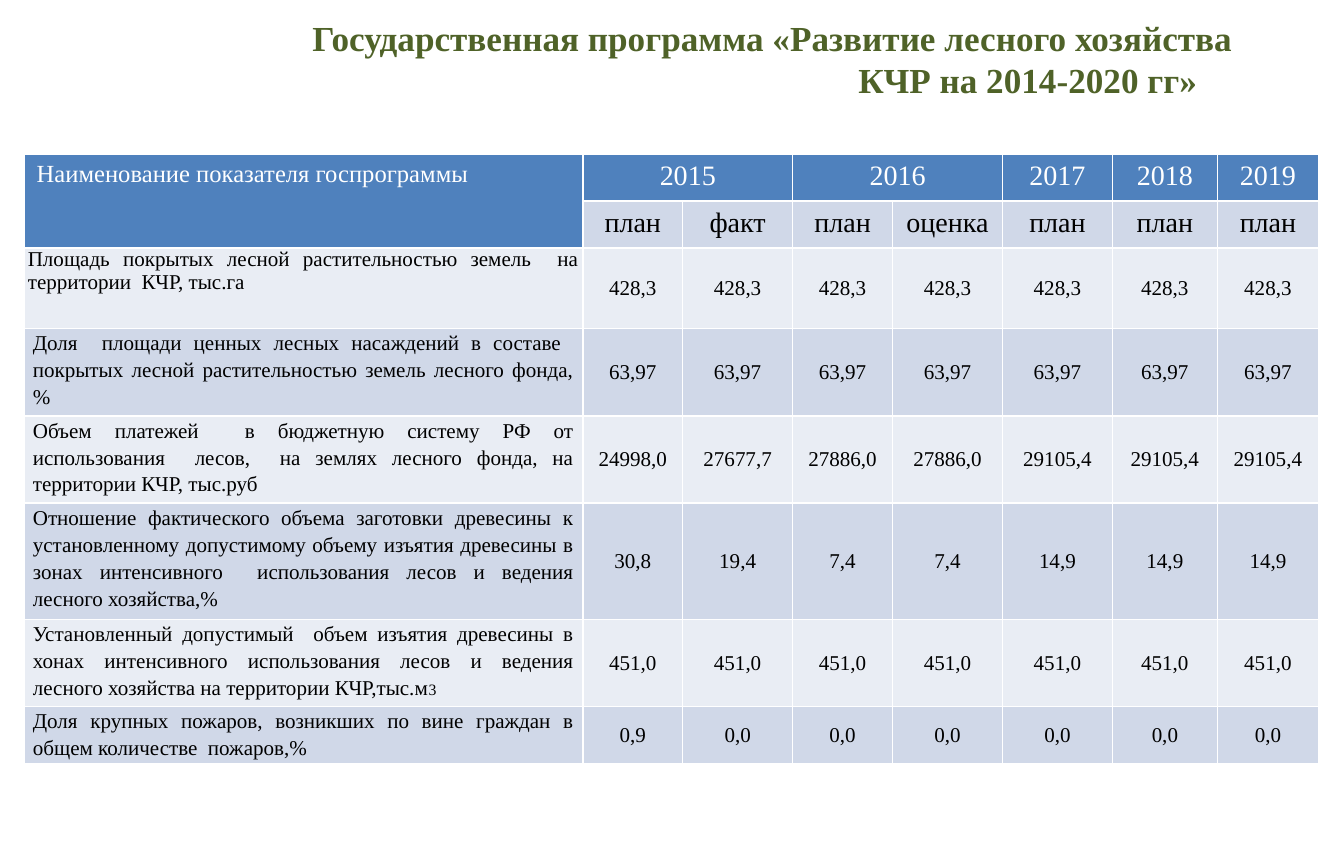
from pptx import Presentation
from pptx import util as u
from pptx.dml.color import RGBColor
from pptx.enum import text

COLORS = {
    "title": "4F6228",
    "header": "4F81BD",
    "header_text": "FFFFFF",
    "body_text": "000000",
    "band_dark": "D0D8E8",
    "band_light": "E9EDF4",
}
FONT = "Times New Roman"
SLIDE_WIDTH, SLIDE_HEIGHT = 10.63, 6.69

COLUMN_WIDTHS = [4.42, 0.79, 0.87, 0.79, 0.87, 0.87, 0.83, 0.8]
ROW_HEIGHTS = [0.37, 0.37, 0.64, 0.69, 0.69, 0.92, 0.69, 0.45]

TITLE = "Государственная программа «Развитие лесного хозяйства КЧР на 2014-2020 гг»"
INDICATOR_HEADING = "Наименование показателя госпрограммы"
YEARS = [("2015", 1, 2), ("2016", 3, 4), ("2017", 5, 5), ("2018", 6, 6), ("2019", 7, 7)]
STAGES = ["план", "факт", "план", "оценка", "план", "план", "план"]
INDICATORS = [
    ("Площадь покрытых лесной растительностью земель  на территории  КЧР, тыс.га",
     ["428,3"] * 7),
    ("Доля  площади ценных лесных насаждений в составе  покрытых лесной "
     "растительностью земель лесного фонда,%",
     ["63,97"] * 7),
    ("Объем платежей  в бюджетную систему РФ от использования  лесов,  "
     "на землях лесного фонда, на территории КЧР, тыс.руб",
     ["24998,0", "27677,7", "27886,0", "27886,0", "29105,4", "29105,4", "29105,4"]),
    ("Отношение фактического объема заготовки древесины к установленному "
     "допустимому объему изъятия древесины в зонах интенсивного  использования "
     "лесов и ведения лесного хозяйства,%",
     ["30,8", "19,4", "7,4", "7,4", "14,9", "14,9", "14,9"]),
    ("Установленный допустимый  объем изъятия древесины в хонах интенсивного "
     "использования лесов и ведения лесного хозяйства на территории КЧР,тыс.м",
     ["451,0"] * 7),
    ("Доля крупных пожаров, возникших по вине граждан в общем количестве  пожаров,%",
     ["0,9"] + ["0,0"] * 6),
]
VOLUME_ROW = 4  # the indicator measured in cubic metres


def add_run(paragraph, content, size=12, color="body_text", bold=False):
    run = paragraph.add_run()
    run.text = content
    run.font.name = FONT
    run.font.size = u.Pt(size)
    run.font.bold = bold
    run.font.color.rgb = RGBColor.from_string(COLORS[color])


def write_text(frame, content, align="CENTER", spacing=None, **run_format):
    paragraph = frame.paragraphs[0]
    paragraph.alignment = getattr(text.PP_ALIGN, align)
    paragraph.line_spacing = spacing
    add_run(paragraph, content, **run_format)
    return paragraph


def fill_cell(cell, content, fill, side_inset=None, middle=False, **text_format):
    """Colour and write a cell; side_inset also removes the vertical margins."""
    cell.fill.solid()
    cell.fill.fore_color.rgb = RGBColor.from_string(COLORS[fill])
    if side_inset is not None:
        cell.margin_left = cell.margin_right = u.Inches(side_inset)
        cell.margin_top = cell.margin_bottom = 0
    if middle:
        cell.vertical_anchor = text.MSO_ANCHOR.MIDDLE
    return write_text(cell.text_frame, content, **text_format)


def place_title(slide):
    """Set the heading with a hanging indent that pushes its second line right."""
    title = slide.shapes.title
    title.left, title.top = u.Inches(2.28), u.Inches(0.08)
    title.width, title.height = u.Inches(7.56), u.Inches(1.35)
    frame = title.text_frame
    frame.word_wrap = True
    frame.auto_size = text.MSO_AUTO_SIZE.NONE
    frame.vertical_anchor = text.MSO_ANCHOR.TOP
    frame.margin_right = 0
    heading = write_text(frame, TITLE, align="LEFT", size=20, color="title", bold=True)
    properties = heading._p.get_or_add_pPr()
    properties.set("marL", str(u.Inches(4.41)))
    properties.set("indent", str(-u.Inches(4.32)))


def add_grid(slide):
    frame = slide.shapes.add_table(
        len(ROW_HEIGHTS), len(COLUMN_WIDTHS), u.Inches(0.19), u.Inches(1.22),
        u.Inches(sum(COLUMN_WIDTHS)), u.Inches(sum(ROW_HEIGHTS)))
    table = frame.table
    for column, width in zip(table.columns, COLUMN_WIDTHS):
        column.width = u.Inches(width)
    for row, height in zip(table.rows, ROW_HEIGHTS):
        row.height = u.Inches(height)
    return table


def fill_header(table):
    corner = table.cell(0, 0)
    corner.merge(table.cell(1, 0))
    fill_cell(corner, INDICATOR_HEADING, "header", align="LEFT", size=14,
              color="header_text")
    for year, first, last in YEARS:
        cell = table.cell(0, first)
        if last > first:
            cell.merge(table.cell(0, last))
        fill_cell(cell, year, "header", size=16, color="header_text")
    for column, stage in enumerate(STAGES, 1):
        fill_cell(table.cell(1, column), stage, "band_dark", size=16)


def fill_indicators(table):
    for index, (indicator, values) in enumerate(INDICATORS):
        row = index + 2
        band = "band_dark" if index % 2 else "band_light"
        label = fill_cell(table.cell(row, 0), indicator, band, align="JUSTIFY",
                          side_inset=0.07 if index else 0.03,
                          spacing=1.15 if index else None)
        if index == VOLUME_ROW:
            add_run(label, "3", size=9)
        for column, value in enumerate(values, 1):
            fill_cell(table.cell(row, column), value, band, side_inset=0.03, middle=True)


def main():
    deck = Presentation()
    deck.slide_width, deck.slide_height = u.Inches(SLIDE_WIDTH), u.Inches(SLIDE_HEIGHT)
    slide = deck.slides.add_slide(deck.slide_layouts.get_by_name("Title Only"))
    place_title(slide)
    table = add_grid(slide)
    fill_header(table)
    fill_indicators(table)
    deck.save("out.pptx")


if __name__ == "__main__":
    main()
